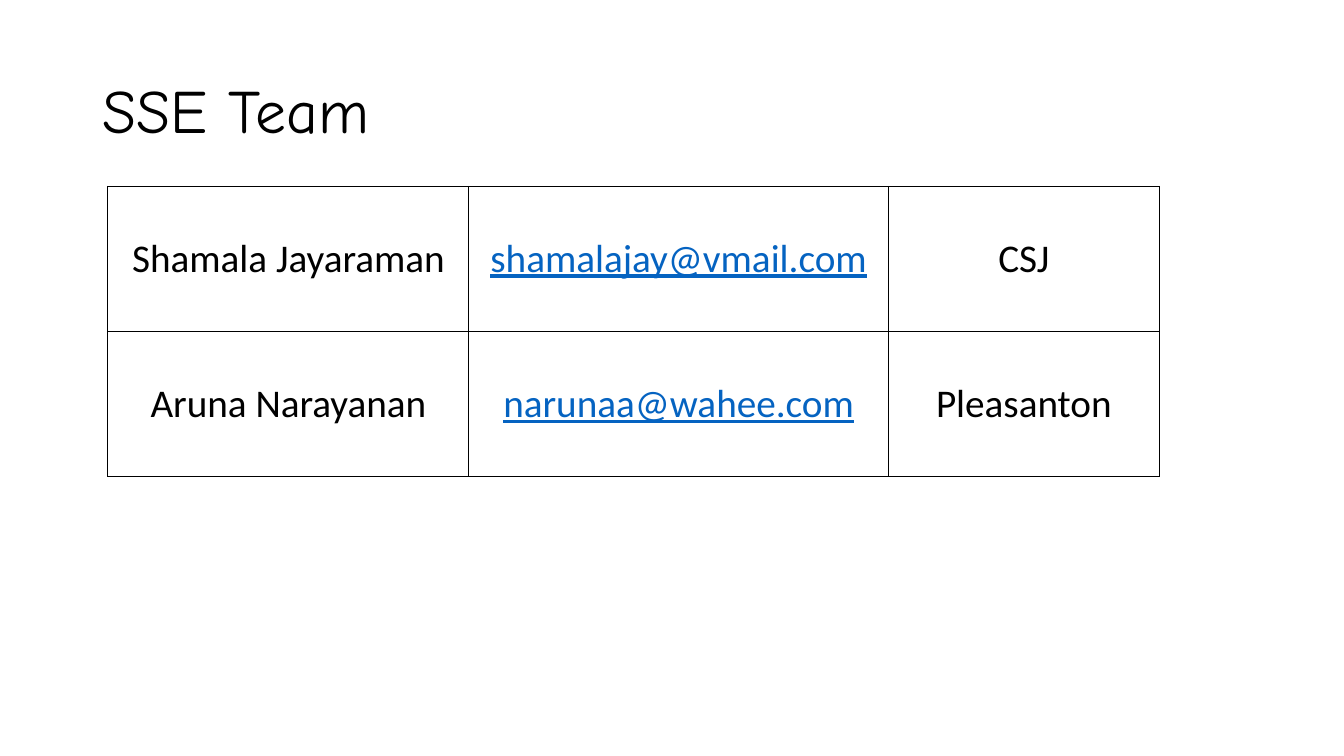
import pptx
import pptx.dml.color
import pptx.enum.text
import pptx.oxml
import pptx.oxml.ns
import pptx.util

Inches = pptx.util.Inches
BLACK = "000000"
LINK_BLUE = "0563C1"


def write_text(frame, text, font="Calibri", size=28, color=BLACK,
               underline=False, align=pptx.enum.text.PP_ALIGN.CENTER, spacing=1.0):
    paragraph = frame.paragraphs[0]
    paragraph.alignment = align
    paragraph.line_spacing = spacing
    run = paragraph.add_run()
    run.text = text
    run.font.name = font
    run.font.size = pptx.util.Pt(size)
    run.font.underline = underline
    run.font.color.rgb = pptx.dml.color.RGBColor.from_string(color)


def add_borders(cell, color=BLACK, width=1):
    properties = cell._tc.get_or_add_tcPr()
    for position, side in enumerate(("lnL", "lnR", "lnT", "lnB")):
        line = pptx.oxml.parse_xml(
            f'<a:{side} {pptx.oxml.ns.nsdecls("a")} w="{pptx.util.Pt(width)}">'
            f'<a:solidFill><a:srgbClr val="{color}"/></a:solidFill></a:{side}>')
        properties.insert(position, line)


presentation = pptx.Presentation()
presentation.slide_width = Inches(13.33)
presentation.slide_height = Inches(7.5)
slide = presentation.slides.add_slide(presentation.slide_layouts.get_by_name("Title Only"))

# Title
title = slide.shapes.title
title.left, title.top = Inches(0.92), Inches(0.4)
title.width, title.height = Inches(11.5), Inches(1.45)
title.text_frame.word_wrap = True
title.text_frame.auto_size = pptx.enum.text.MSO_AUTO_SIZE.NONE
title.text_frame.vertical_anchor = pptx.enum.text.MSO_ANCHOR.MIDDLE
write_text(title.text_frame, "SSE Team", font="Comic Neue", size=44,
           align=pptx.enum.text.PP_ALIGN.LEFT, spacing=0.9)

# Team table: name, e-mail, city
members = [
    ("Shamala Jayaraman", "shamalajay@vmail.com", "CSJ"),
    ("Aruna Narayanan", "narunaa@wahee.com", "Pleasanton"),
]
column_widths = [3.58, 4.16, 2.69]
row_height = 1.44
table = slide.shapes.add_table(
    len(members), len(column_widths), Inches(1.07), Inches(1.85),
    Inches(sum(column_widths)), Inches(row_height * len(members))).table
table.first_row = False
table.horz_banding = False
for column, width in zip(table.columns, column_widths):
    column.width = Inches(width)

for row, member in zip(table.rows, members):
    row.height = Inches(row_height)
    for cell, text in zip(row.cells, member):
        is_email = "@" in text
        cell.fill.background()
        cell.vertical_anchor = pptx.enum.text.MSO_ANCHOR.MIDDLE
        cell.margin_left = cell.margin_right = Inches(0.03)
        cell.margin_top = cell.margin_bottom = Inches(0.02)
        write_text(cell.text_frame, text, underline=is_email,
                   color=LINK_BLUE if is_email else BLACK)
        add_borders(cell)

presentation.save("out.pptx")
